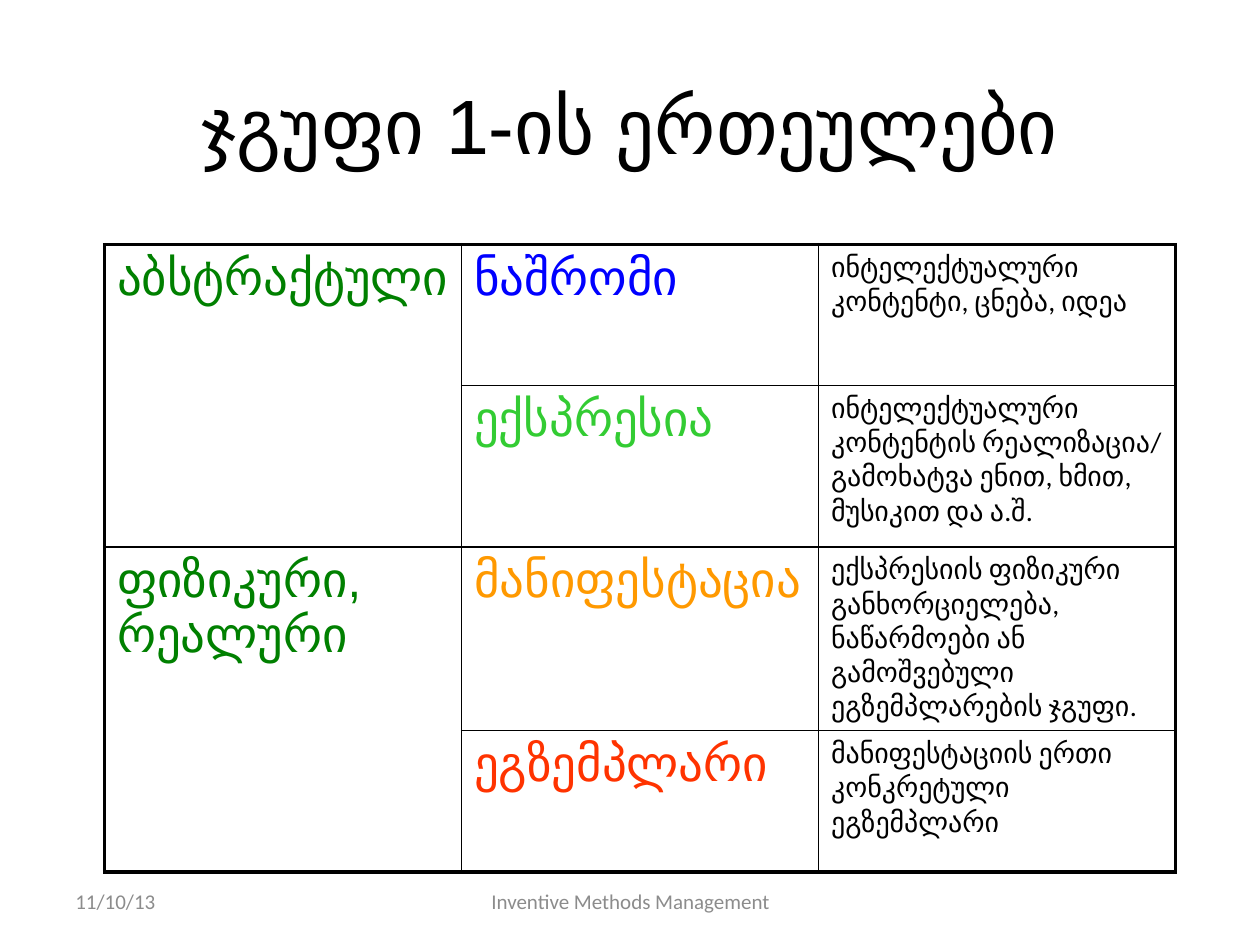
from lxml.etree import SubElement
from pptx import Presentation
from pptx.dml.color import RGBColor
from pptx.enum.text import MSO_ANCHOR, PP_ALIGN
from pptx.oxml.ns import qn
from pptx.util import Inches, Pt

COLORS = {
    "black": "000000",
    "green": "008000",
    "blue": "0000FF",
    "lime": "33CC33",
    "orange": "FF9900",
    "red": "FF3300",
    "gray": "8C8C8C",
}
OUTER, INNER = 2.25, 1


def write(frame, text, size, font, color, align=PP_ALIGN.LEFT):
    frame.word_wrap = True
    paragraph = frame.paragraphs[0]
    paragraph.alignment = align
    run = paragraph.add_run()
    run.text = text
    run.font.size = Pt(size)
    run.font.name = font
    run.font.color.rgb = RGBColor.from_string(COLORS[color])


def set_borders(cell, widths):
    """Draw black cell borders; widths in points: left, right, top, bottom."""
    properties = cell._tc.get_or_add_tcPr()
    for index, (side, width) in enumerate(zip(("lnL", "lnR", "lnT", "lnB"), widths)):
        line = properties.makeelement(qn(f"a:{side}"), {"w": str(Pt(width))})
        fill = SubElement(line, qn("a:solidFill"))
        SubElement(fill, qn("a:srgbClr"), val=COLORS["black"])
        properties.insert(index, line)


prs = Presentation()
prs.slide_width, prs.slide_height = Inches(10), Inches(7.5)
slide = prs.slides.add_slide(prs.slide_layouts[6])

# Title and footer
center = PP_ALIGN.CENTER
for text, left, top, width, height, size, font, color, align in [
    ("ჯგუფი 1-ის ერთეულები", 0.5, 0.5, 9, 0.97, 44, "Arial", "black", center),
    ("11/10/13", 0.5, 6.95, 2.33, 0.4, 12, "Calibri", "gray", PP_ALIGN.LEFT),
    ("Inventive Methods Management", 3.42, 6.95, 3.17, 0.4, 12, "Calibri", "gray", center),
]:
    box = slide.shapes.add_textbox(Inches(left), Inches(top), Inches(width), Inches(height))
    box.text_frame.vertical_anchor = MSO_ANCHOR.MIDDLE
    write(box.text_frame, text, size, font, color, align)

# Entities: name, colour, definition
entities = [
    ("ნაშრომი", "blue", "ინტელექტუალური კონტენტი, ცნება, იდეა"),
    ("ექსპრესია", "lime",
     "ინტელექტუალური კონტენტის რეალიზაცია/ გამოხატვა ენით, ხმით, მუსიკით და ა.შ."),
    ("მანიფესტაცია", "orange",
     "ექსპრესიის ფიზიკური განხორციელება, ნაწარმოები ან გამოშვებული ეგზემპლარების ჯგუფი."),
    ("ეგზემპლარი", "red", "მანიფესტაციის ერთი კონკრეტული ეგზემპლარი"),
]
natures = ["აბსტრაქტული", "ფიზიკური, რეალური"]
row_heights = [1.12, 1.28, 1.46, 1.12]

table = slide.shapes.add_table(
    len(entities), 3, Inches(0.83), Inches(1.94), Inches(8.5), Inches(sum(row_heights))
).table
table.first_row = table.horz_banding = False
for column in table.columns:
    column.width = Inches(8.5 / 3)
for row, height in zip(table.rows, row_heights):
    row.height = Inches(height)

for index, nature in enumerate(natures):
    first = table.cell(2 * index, 0)
    first.merge(table.cell(2 * index + 1, 0))
    write(first.text_frame, nature, 28, "Arial", "green")

for r, (name, color, definition) in enumerate(entities):
    write(table.cell(r, 1).text_frame, name, 28, "Arial", color)
    write(table.cell(r, 2).text_frame, definition, 16, "Calibri", "black")
    for c in range(3):
        cell = table.cell(r, c)
        cell.fill.background()
        last_row = r + cell.span_height - 1 if cell.is_merge_origin else r
        on_edge = (c == 0, c == 2, r == 0, last_row == len(entities) - 1)
        set_borders(cell, [OUTER if edge else INNER for edge in on_edge])

prs.save("out.pptx")
